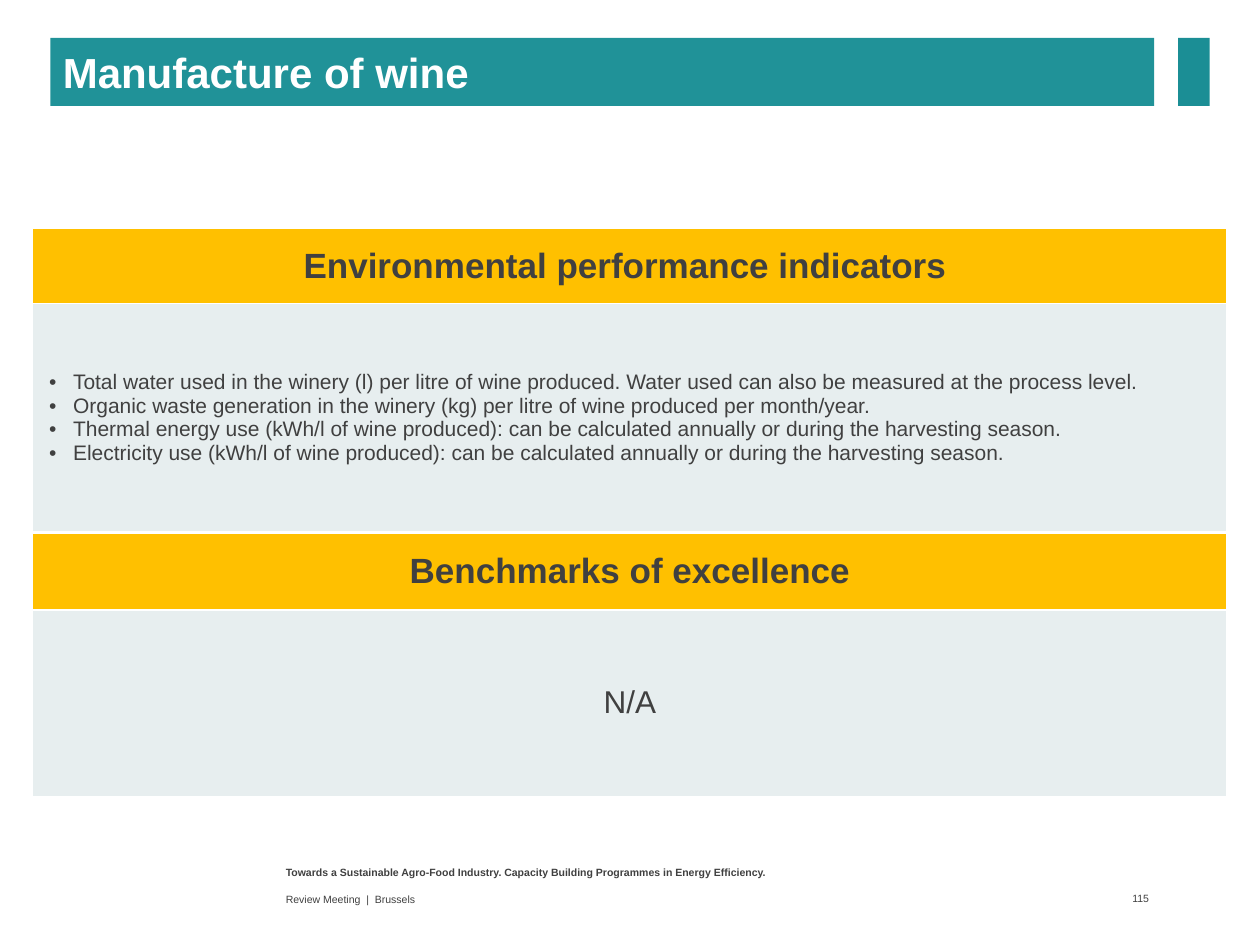
from dataclasses import dataclass

from lxml.etree import SubElement
from pptx import Presentation
from pptx.dml.color import RGBColor
from pptx.enum.shapes import MSO_SHAPE
from pptx.enum.text import MSO_ANCHOR, PP_ALIGN
from pptx.oxml.ns import qn
from pptx.util import Inches, Pt

TEAL = RGBColor(0x20, 0x92, 0x98)
DARK_TEAL = RGBColor(0x1B, 0x8E, 0x95)
AMBER = RGBColor(0xFF, 0xC0, 0x00)
PALE = RGBColor(0xE7, 0xEE, 0xEF)
GREY = RGBColor(0x40, 0x40, 0x40)
WHITE = RGBColor(0xFF, 0xFF, 0xFF)
FONT = "Arial"
BULLET_INDENT = Inches(0.19)


@dataclass
class Section:
    top: float
    heights: tuple[float, float]
    heading: str
    lines: list[str]
    size: int
    bulleted: bool = False
    space_after: int = 0


@dataclass
class Footer:
    left: float
    top: float
    width: float
    height: float
    text: str
    bold: bool = False
    anchor: MSO_ANCHOR = MSO_ANCHOR.MIDDLE
    align: PP_ALIGN = PP_ALIGN.LEFT
    right_inset: float = 0.1


SECTIONS = [
    Section(1.81, (0.6, 1.81), "Environmental performance indicators ", [
        "Total water used in the winery (l) per litre of wine produced. "
        "Water used can also be measured at the process level.",
        "Organic waste generation in the winery (kg) per litre of wine produced per month/year.",
        "Thermal energy use (kWh/l of wine produced): "
        "can be calculated annually or during the harvesting season.",
        "Electricity use (kWh/l of wine produced): "
        "can be calculated annually or during the harvesting season.",
    ], 12, bulleted=True),
    Section(4.23, (0.61, 1.48), "Benchmarks of excellence", ["N/A"], 18, space_after=6),
]
FOOTERS = [
    Footer(2.17, 6.82, 5.5, 0.21,
           "Towards a Sustainable Agro-Food Industry. "
           "Capacity Building Programmes in Energy Efficiency.",
           bold=True, anchor=MSO_ANCHOR.TOP),
    Footer(2.17, 7.04, 5.5, 0.19, "Review Meeting  |  Brussels"),
    Footer(8.6, 7.03, 0.56, 0.2, "115", align=PP_ALIGN.RIGHT, right_inset=0.04),
]


def style(para, size: int, color: RGBColor, bold: bool, align: PP_ALIGN) -> None:
    para.alignment = align
    para.font.name = FONT
    para.font.size = Pt(size)
    para.font.bold = bold
    para.font.color.rgb = color


def add_bullet(para) -> None:
    properties = para._p.get_or_add_pPr()
    properties.set("marL", str(BULLET_INDENT))
    properties.set("indent", str(-BULLET_INDENT))
    SubElement(properties, qn("a:buFont"), typeface=FONT)
    SubElement(properties, qn("a:buChar"), char="•")


def add_bar(page, left: float, width: float, color: RGBColor):
    bar = page.shapes.add_shape(
        MSO_SHAPE.RECTANGLE, Inches(left), Inches(0.3), Inches(width), Inches(0.54))
    bar.shadow.inherit = False
    bar.fill.solid()
    bar.fill.fore_color.rgb = color
    bar.line.fill.background()
    return bar


def add_footer(page, footer: Footer) -> None:
    box = page.shapes.add_textbox(
        Inches(footer.left), Inches(footer.top), Inches(footer.width), Inches(footer.height))
    frame = box.text_frame
    frame.word_wrap = True
    frame.vertical_anchor = footer.anchor
    frame.margin_right = Inches(footer.right_inset)
    frame.text = footer.text
    style(frame.paragraphs[0], 6, GREY, footer.bold, footer.align)


def prepare_cell(cell, color: RGBColor, side: float, edge: float) -> None:
    properties = cell._tc.get_or_add_tcPr()
    for name in ("lnL", "lnR", "lnT", "lnB"):
        line = SubElement(properties, qn(f"a:{name}"), w=str(Pt(1)))
        SubElement(SubElement(line, qn("a:solidFill")), qn("a:srgbClr"), val=str(WHITE))
    cell.fill.solid()
    cell.fill.fore_color.rgb = color
    cell.vertical_anchor = MSO_ANCHOR.MIDDLE
    cell.margin_left = cell.margin_right = Inches(side)
    cell.margin_top = cell.margin_bottom = Inches(edge)


def add_section(page, section: Section) -> None:
    table = page.shapes.add_table(
        2, 1, Inches(0.26), Inches(section.top), Inches(9.48),
        Inches(sum(section.heights))).table
    table.first_row = table.horz_banding = False
    for row, height in zip(table.rows, section.heights):
        row.height = Inches(height)
    heading, body = table.cell(0, 0), table.cell(1, 0)
    prepare_cell(heading, AMBER, 0.1, 0.05)
    heading.text = section.heading
    style(heading.text_frame.paragraphs[0], 20, GREY, True, PP_ALIGN.CENTER)
    prepare_cell(body, PALE, 0.13, 0.06)
    body.text = "\n".join(section.lines)
    align = PP_ALIGN.JUSTIFY if section.bulleted else PP_ALIGN.CENTER
    for para in body.text_frame.paragraphs:
        para.space_after = Pt(section.space_after)
        if section.bulleted:
            add_bullet(para)
        style(para, section.size, GREY, False, align)


def main() -> None:
    """Build the wine manufacture slide and save it."""
    deck = Presentation()
    deck.slide_width, deck.slide_height = Inches(10), Inches(7.5)
    page = deck.slides.add_slide(deck.slide_layouts[6])
    for footer in FOOTERS:
        add_footer(page, footer)
    title = add_bar(page, 0.4, 8.76, TEAL).text_frame
    title.text = "Manufacture of wine"
    title.vertical_anchor = MSO_ANCHOR.MIDDLE
    style(title.paragraphs[0], 24, WHITE, True, PP_ALIGN.LEFT)
    add_bar(page, 9.35, 0.25, DARK_TEAL)
    for section in SECTIONS:
        add_section(page, section)
    deck.save("out.pptx")


if __name__ == "__main__":
    main()
